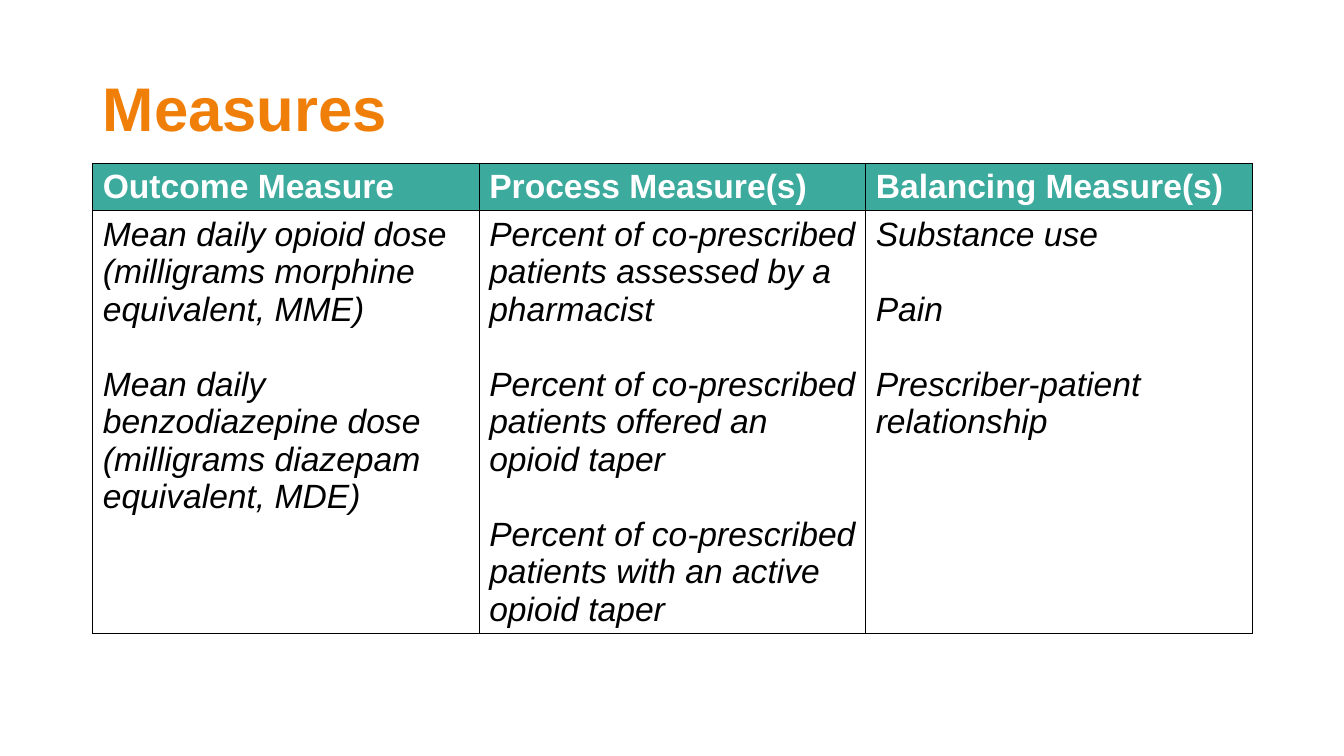
from dataclasses import dataclass

from lxml.etree import SubElement
from pptx import Presentation
from pptx.dml.color import RGBColor
from pptx.enum.text import MSO_ANCHOR, PP_ALIGN
from pptx.oxml.ns import qn
from pptx.slide import Slide
from pptx.table import _Cell
from pptx.text.text import _Paragraph
from pptx.util import Inches, Pt

FONT = "Arial"
ORANGE, TEAL, WHITE, BLACK = "F07F09", "3CAA9D", "FFFFFF", "000000"
LEFT, WIDTH = 0.92, 11.5
TABLE_TOP, HEADER_HEIGHT, BODY_HEIGHT = 1.62, 0.47, 4.18
TEXT_SIZE, MEASURE_GAP = 24, 26.8


@dataclass(frozen=True)
class MeasureColumn:
    heading: str
    measures: tuple[str, ...]


COLUMNS = (
    MeasureColumn("Outcome Measure", (
        "Mean daily opioid dose (milligrams morphine equivalent, MME)",
        "Mean daily benzodiazepine dose (milligrams diazepam equivalent, MDE)",
    )),
    MeasureColumn("Process Measure(s)", (
        "Percent of co-prescribed patients assessed by a pharmacist",
        "Percent of co-prescribed patients offered an opioid taper",
        "Percent of co-prescribed patients with an active opioid taper",
    )),
    MeasureColumn("Balancing Measure(s)", (
        "Substance use",
        "Pain",
        "Prescriber-patient relationship",
    )),
)


def color(value: str) -> RGBColor:
    return RGBColor.from_string(value)


def add_text(paragraph: _Paragraph, text: str, size: float, hex_color: str,
             bold: bool = False, italic: bool = False) -> None:
    run = paragraph.add_run()
    run.text = text
    run.font.name = FONT
    run.font.size = Pt(size)
    run.font.bold = bold
    run.font.italic = italic
    run.font.color.rgb = color(hex_color)


def add_borders(cell: _Cell) -> None:
    properties = cell._tc.get_or_add_tcPr()
    for index, side in enumerate(("a:lnL", "a:lnR", "a:lnT", "a:lnB")):
        line = properties.makeelement(qn(side), {"w": str(Pt(1))})
        fill = SubElement(line, qn("a:solidFill"))
        SubElement(fill, qn("a:srgbClr"), val=BLACK)
        properties.insert(index, line)


def add_title(slide: Slide) -> None:
    title = slide.shapes.title
    title.left, title.top = Inches(LEFT), Inches(0.4)
    title.width, title.height = Inches(WIDTH), Inches(1.45)
    title.text_frame.vertical_anchor = MSO_ANCHOR.MIDDLE
    paragraph = title.text_frame.paragraphs[0]
    paragraph.alignment = PP_ALIGN.LEFT
    paragraph.line_spacing = 0.8
    add_text(paragraph, "Measures", 44, ORANGE, bold=True)


def add_measure_table(slide: Slide) -> None:
    table = slide.shapes.add_table(
        2, len(COLUMNS), Inches(LEFT), Inches(TABLE_TOP),
        Inches(WIDTH), Inches(HEADER_HEIGHT + BODY_HEIGHT)).table
    table.horz_banding = False
    table.rows[0].height = Inches(HEADER_HEIGHT)
    table.rows[1].height = Inches(BODY_HEIGHT)

    for index, column in enumerate(COLUMNS):
        # Heading cell
        header = table.cell(0, index)
        header.fill.solid()
        header.fill.fore_color.rgb = color(TEAL)
        add_text(header.text_frame.paragraphs[0], column.heading,
                 TEXT_SIZE, WHITE, bold=True)
        add_borders(header)

        # Measures, one paragraph each
        body = table.cell(1, index)
        body.fill.background()
        frame = body.text_frame
        for position, measure in enumerate(column.measures):
            paragraph = frame.add_paragraph() if position else frame.paragraphs[0]
            if position:
                paragraph.space_before = Pt(MEASURE_GAP)
            add_text(paragraph, measure, TEXT_SIZE, BLACK, italic=True)
        add_borders(body)


def main() -> None:
    presentation = Presentation()
    presentation.slide_width = Inches(13.33)
    presentation.slide_height = Inches(7.5)
    slide = presentation.slides.add_slide(presentation.slide_layouts[5])
    add_title(slide)
    add_measure_table(slide)
    presentation.save("out.pptx")


if __name__ == "__main__":
    main()
